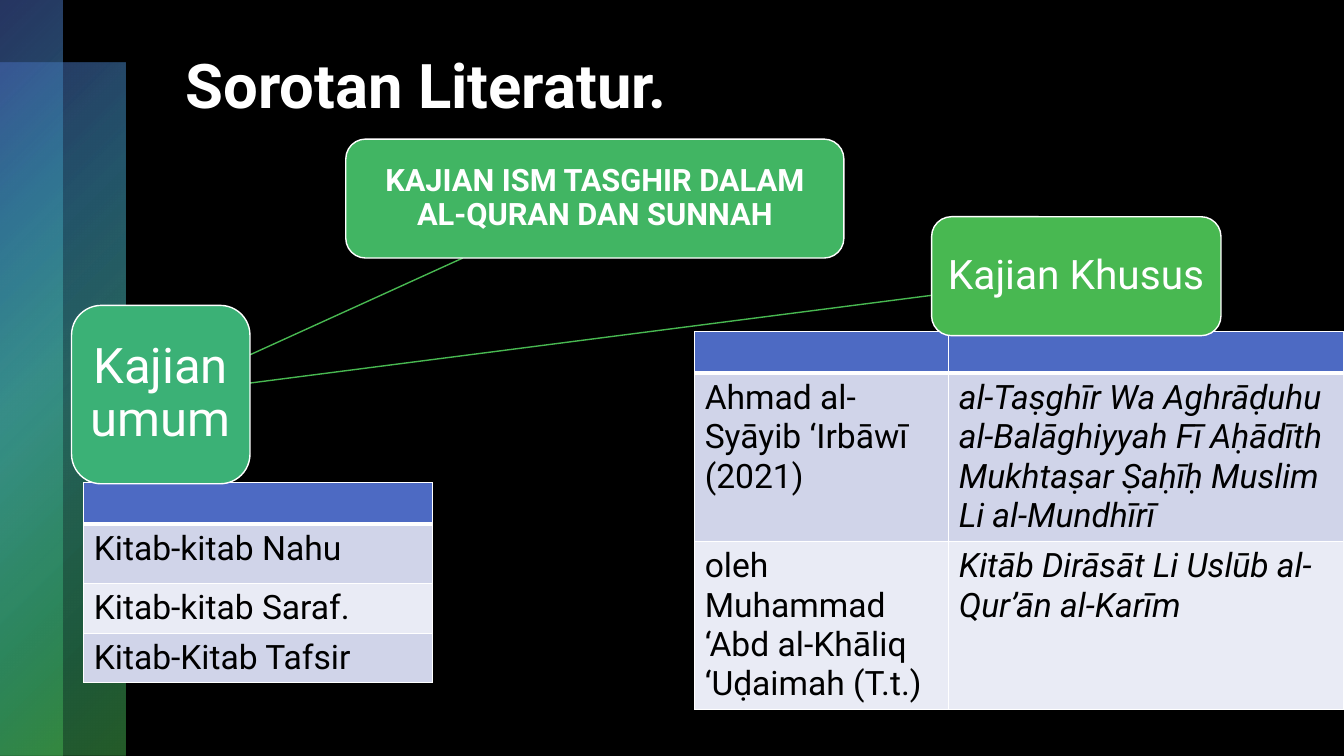
from lxml import etree
from pptx import Presentation
from pptx.dml.color import RGBColor
from pptx.enum import shapes, text
from pptx.oxml import parse_xml
from pptx.oxml.ns import nsdecls, qn
from pptx.util import Inches, Pt

THEME = {
    "font": "Roboto", "background": "000000", "white": "FFFFFF", "text": "000000",
    "header": "4D6AC3", "bands": ("D0D4E9", "E9EBF5"), "link": "48B851",
    "title_size": 44, "table_size": 24, "line": 1, "header_line": 3,
}
TITLE = "Sorotan Literatur."
# Colour, opacity in percent, by position in percent
GRADIENT = [(0, "4D6AC3", 50), (25, "3B8AB1", 60), (50, "46B3AA", 55),
            (81, "3BB176", 50), (99, "48B851", 50)]
SIDE_BARS = [(0, 0.62, 1.24, 6.88), (0, 0, 0.62, 7.5)]
TABLES = [
    {"at": (6.89, 3.29), "columns": (2.52, 3.92), "rows": (0.41, 1.67, 1.67),
     "cells": [
         ("Ahmad al-Syāyib ‘Irbāwī (2021)",
          "al-Taṣghīr Wa Aghrāḍuhu al-Balāghiyyah Fī Aḥādīth Mukhtaṣar Ṣaḥīḥ Muslim "
          "Li al-Mundhīrī"),
         ("oleh Muhammad ‘Abd al-Khāliq ‘Uḍaimah (T.t.)",
          "Kitāb Dirāsāt Li Uslūb al-Qur’ān al-Karīm")]},
    {"at": (0.83, 4.79), "columns": (3.46,), "rows": (0.41, 0.59, 0.49, 0.49),
     "cells": [("Kitab-kitab Nahu",), ("Kitab-kitab Saraf.",), ("Kitab-Kitab Tafsir",)]},
]
LINKS = [(2.48, 3.52, 4.59, 2.56), (2.48, 3.8, 9.24, 2.93)]
# Text, place, fill, inset, size, bold
TOPICS = [
    ("Kajian umum", (0.71, 3.03, 1.77, 1.77), "3BB176", 0.1, 35, False),
    ("KAJIAN ISM TASGHIR DALAM AL-QURAN DAN SUNNAH", (3.43, 1.38, 4.94, 1.18),
     "41B563", 0.06, 22, True),
    ("Kajian Khusus", (9.24, 2.15, 2.87, 1.18), "48B851", 0.08, 29, False),
]


def inches(values):
    return [Inches(value) for value in values]


def rgb(name):
    return RGBColor.from_string(THEME.get(name, name))


def set_all(target, **values):
    for name, value in values.items():
        setattr(target, name, value)


def write(frame, words, size, color, **font):
    paragraph = frame.paragraphs[0]
    run = paragraph.add_run()
    run.text = words
    set_all(run.font, name=THEME["font"], size=Pt(size), **font)
    run.font.color.rgb = rgb(color)
    return paragraph


def add_side_bar(slide, place):
    bar = slide.shapes.add_shape(shapes.MSO_SHAPE.RECTANGLE, *inches(place))
    bar.shadow.inherit = False
    bar.line.fill.background()
    stops = "".join(
        f'<a:gs pos="{position * 1000}"><a:srgbClr val="{color}">'
        f'<a:alpha val="{opacity * 1000}"/></a:srgbClr></a:gs>'
        for position, color, opacity in GRADIENT)
    bar._element.spPr.find(qn("a:prstGeom")).addnext(parse_xml(
        f'<a:gradFill {nsdecls("a")} rotWithShape="1"><a:gsLst>{stops}</a:gsLst>'
        '<a:path path="circle"><a:fillToRect r="100000" b="100000"/></a:path></a:gradFill>'))


def set_borders(cell, bottom, top):
    widths = {"lnL": THEME["line"], "lnR": THEME["line"], "lnT": top, "lnB": bottom}
    properties = cell._tc.get_or_add_tcPr()
    for index, (side, width) in enumerate(widths.items()):
        properties.insert(index, parse_xml(
            f'<a:{side} {nsdecls("a")} w="{Pt(width)}"><a:solidFill>'
            f'<a:srgbClr val="{THEME["white"]}"/></a:solidFill></a:{side}>'))


def add_literature_table(slide, data):
    columns, rows = data["columns"], data["rows"]
    table = slide.shapes.add_table(
        len(rows), len(columns),
        *inches((*data["at"], sum(columns), sum(rows)))).table
    for column, width in zip(table.columns, columns):
        column.width = Inches(width)
    for index, (row, height) in enumerate(zip(table.rows, rows)):
        row.height = Inches(height)
        for position, cell in enumerate(row.cells):
            cell.fill.solid()
            cell.fill.fore_color.rgb = rgb(
                THEME["bands"][(index - 1) % 2] if index else "header")
            set_borders(cell, THEME["line" if index else "header_line"],
                        THEME["header_line" if index == 1 else "line"])
            if index:
                write(cell.text_frame, data["cells"][index - 1][position],
                      THEME["table_size"], "text", italic=position == 1, bold=False)


def add_link(slide, ends):
    link = slide.shapes.add_connector(shapes.MSO_CONNECTOR.STRAIGHT, *inches(ends))
    link.line.color.rgb = rgb("link")
    link.line.width = Pt(THEME["line"])
    etree.SubElement(link._element.spPr, qn("a:effectLst"))


def add_topic(slide, words, place, fill, inset, size, bold):
    box = slide.shapes.add_shape(shapes.MSO_SHAPE.ROUNDED_RECTANGLE, *inches(place))
    box.shadow.inherit = False
    box.fill.solid()
    box.fill.fore_color.rgb = rgb(fill)
    box.line.color.rgb = rgb("white")
    box.line.width = Pt(THEME["line"])
    margin = Inches(inset)
    set_all(box.text_frame, word_wrap=True, vertical_anchor=text.MSO_ANCHOR.MIDDLE,
            margin_left=margin, margin_right=margin, margin_top=margin, margin_bottom=margin)
    paragraph = write(box.text_frame, words, size, "white", bold=bold)
    set_all(paragraph, alignment=text.PP_ALIGN.CENTER, line_spacing=0.9)


def main():
    presentation = Presentation()
    set_all(presentation, slide_width=Inches(13.33), slide_height=Inches(7.5))
    slide = presentation.slides.add_slide(presentation.slide_layouts[5])
    slide.background.fill.solid()
    slide.background.fill.fore_color.rgb = rgb("background")

    for place in SIDE_BARS:
        add_side_bar(slide, place)

    title = slide.shapes.title
    left, top, width, height = inches((1.74, 0.5, 10.37, 1.7))
    set_all(title, left=left, top=top, width=width, height=height)
    set_all(title.text_frame, word_wrap=True, vertical_anchor=text.MSO_ANCHOR.TOP)
    heading = write(title.text_frame, TITLE, THEME["title_size"], "white", bold=True)
    set_all(heading, alignment=text.PP_ALIGN.LEFT, line_spacing=0.9)

    for data in TABLES:
        add_literature_table(slide, data)
    for ends in LINKS:
        add_link(slide, ends)
    for topic in TOPICS:
        add_topic(slide, *topic)
    presentation.save("out.pptx")


if __name__ == "__main__":
    main()
